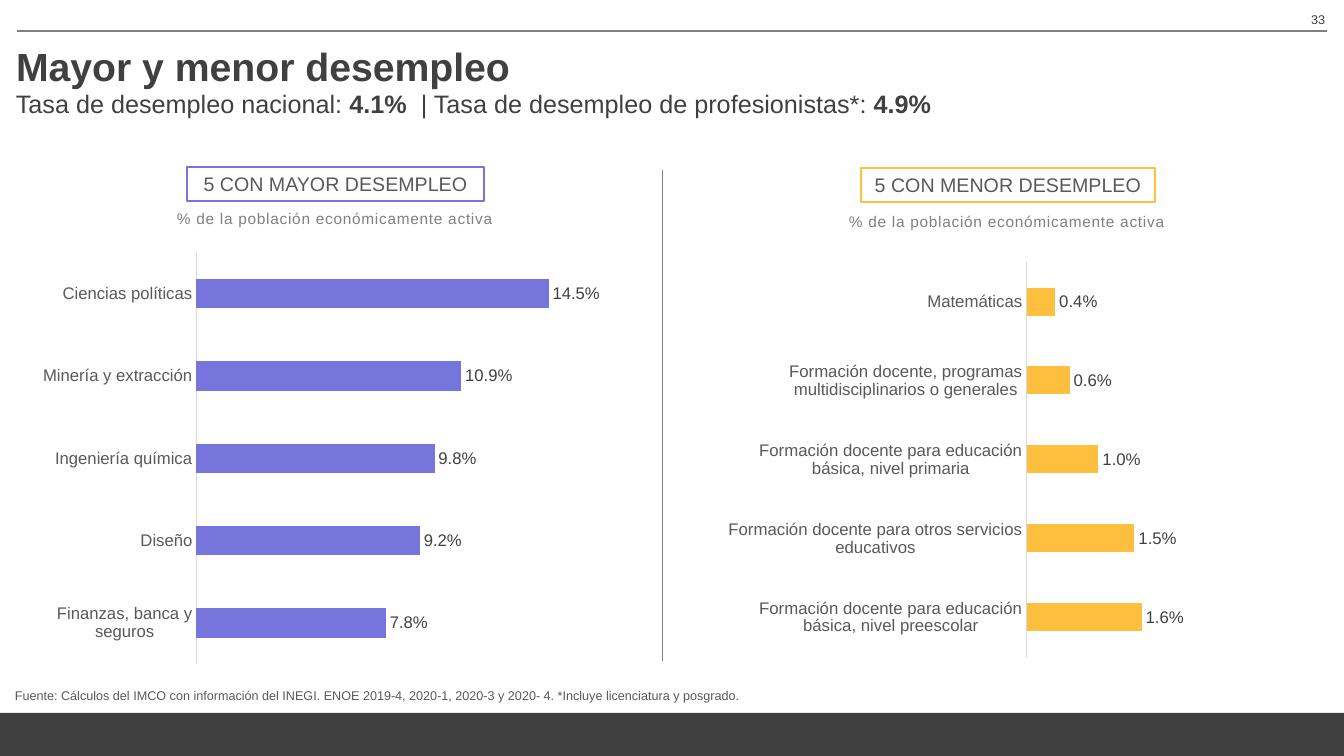
from dataclasses import dataclass

from lxml import etree
from pptx import Presentation
from pptx.chart.data import CategoryChartData
from pptx.dml.color import RGBColor
from pptx.enum.chart import XL_CHART_TYPE as ChartType
from pptx.enum.chart import XL_LABEL_POSITION as LabelPosition
from pptx.enum.chart import XL_TICK_LABEL_POSITION as TickLabelPosition
from pptx.enum.chart import XL_TICK_MARK as TickMark
from pptx.enum.shapes import MSO_CONNECTOR as Connector
from pptx.enum.shapes import MSO_SHAPE as Shape
from pptx.enum.text import MSO_ANCHOR as Anchor
from pptx.enum.text import PP_ALIGN as Align
from pptx.oxml import parse_xml
from pptx.oxml.ns import nsdecls, qn
from pptx.util import Pt

PX = 914400 / 100.8


@dataclass(frozen=True)
class Theme:
    font: str = "Arial"
    dark: RGBColor = RGBColor(0x40, 0x40, 0x40)
    label: RGBColor = RGBColor(0x59, 0x59, 0x59)
    muted: RGBColor = RGBColor(0x80, 0x80, 0x80)
    axis: RGBColor = RGBColor(0xD9, 0xD9, 0xD9)
    purple: RGBColor = RGBColor(0x76, 0x75, 0xDB)
    yellow: RGBColor = RGBColor(0xFF, 0xBF, 0x3E)
    title: int = 28
    subtitle: int = 18
    heading: int = 14
    chart: int = 12
    unit: int = 11
    small: int = 9


theme = Theme()


def px(*lengths):
    return [round(length * PX) for length in lengths]


def style(font, size, color, bold=False):
    font.name = theme.font
    font.size = Pt(size)
    font.bold = bold
    font.color.rgb = color


deck = Presentation()
deck.slide_width, deck.slide_height = px(1344, 756)
page = deck.slides.add_slide(deck.slide_layouts[5])

# Footer band
band = page.shapes.add_shape(Shape.RECTANGLE, *px(0, 713, 1344, 43))
band.shadow.inherit = False
band.fill.solid()
band.fill.fore_color.rgb = theme.dark
band.line.fill.background()

# Header rule and column divider
for ends in [(17, 31, 1327, 31), (663, 170, 663, 661)]:
    rule = page.shapes.add_connector(Connector.STRAIGHT, *px(*ends))
    rule.line.color.rgb = theme.muted
    rule.line.width = Pt(0.75)
    etree.SubElement(rule.element.spPr, qn("a:effectLst"))

# Title
title = page.shapes.title
title.left, title.top, title.width, title.height = px(6, 36, 1329, 60)
title.text_frame.vertical_anchor = Anchor.MIDDLE
para = title.text_frame.paragraphs[0]
para.alignment = Align.LEFT
span = para.add_run()
span.text = "Mayor y menor desempleo"
style(span.font, theme.title, theme.dark, True)

# Page number, subtitle, source and units: place, anchor, alignment, size, color, spacing, runs
unit = [("% de la población económicamente activa", False)]
rates = [
    ("Tasa de desempleo nacional: ", False),
    ("4.1%  ", True),
    ("| Tasa de desempleo de profesionistas*: ", False),
    ("4.9%", True),
]
source = [
    ("Fuente: Cálculos del IMCO con información del INEGI. "
     "ENOE 2019-4, 2020-1, 2020-3 y 2020- 4. *Incluye licenciatura y posgrado.", False),
]
texts = [
    ((1032, 7, 303, 40), Anchor.TOP, Align.RIGHT, theme.small, theme.dark, 0, [("33", False)]),
    ((6, 83, 1122, 40), Anchor.TOP, Align.LEFT, theme.subtitle, theme.dark, 0, rates),
    ((5, 681, 1309, 27), Anchor.BOTTOM, Align.LEFT, theme.small, theme.label, 0, source),
    ((167, 204, 339, 29), Anchor.TOP, Align.LEFT, theme.unit, theme.muted, 50, unit),
    ((839, 207, 339, 29), Anchor.TOP, Align.LEFT, theme.unit, theme.muted, 50, unit),
]
for place, anchor, alignment, size, color, spacing, runs in texts:
    box = page.shapes.add_textbox(*px(*place))
    box.text_frame.word_wrap = not spacing
    box.text_frame.vertical_anchor = anchor
    para = box.text_frame.paragraphs[0]
    para.alignment = alignment
    for words, bold in runs:
        span = para.add_run()
        span.text = words
        style(span.font, size, color, bold)
        if spacing:
            span.font._element.set("spc", str(spacing))

# Column headings
headings = [
    ("5 CON MAYOR DESEMPLEO", (187, 167, 297, 34), theme.purple, 2),
    ("5 CON MENOR DESEMPLEO", (861, 168, 294, 34), theme.yellow, 1.75),
]
for words, place, color, weight in headings:
    box = page.shapes.add_shape(Shape.RECTANGLE, *px(*place))
    box.shadow.inherit = False
    box.fill.background()
    box.line.color.rgb = color
    box.line.width = Pt(weight)
    box.text_frame.word_wrap = True
    box.text_frame.vertical_anchor = Anchor.MIDDLE
    para = box.text_frame.paragraphs[0]
    para.alignment = Align.CENTER
    span = para.add_run()
    span.text = words
    style(span.font, theme.heading, theme.label)

# Bar charts: place, plot area as shares of the chart, axis maximum, color, rates
charts = [
    ((33, 244, 567, 429), (0.29, 0.02, 0.69, 0.96), 0.16, theme.purple, {
        "Ciencias políticas": 0.145,
        "Minería y extracción": 0.109,
        "Ingeniería química": 0.098,
        "Diseño": 0.092,
        "Finanzas, banca y seguros": 0.078,
    }),
    ((709, 245, 648, 429), (0.49, 0.04, 0.2, 0.92), 0.018, theme.yellow, {
        "Matemáticas": 0.004,
        "Formación docente, programas multidisciplinarios o generales": 0.006,
        "Formación docente para educación básica, nivel primaria": 0.01,
        "Formación docente para otros servicios educativos": 0.015,
        "Formación docente para educación básica, nivel preescolar": 0.016,
    }),
]
for place, plot_area, maximum, color, rates_by_field in charts:
    data = CategoryChartData(number_format="0.0%")
    data.categories = list(rates_by_field)
    data.add_series("Tasa de desempleo", list(rates_by_field.values()))
    chart = page.shapes.add_chart(ChartType.BAR_CLUSTERED, *px(*place), data).chart
    chart.has_legend = False
    chart.has_title = False
    style(chart.font, theme.chart, theme.label)

    fields = chart.category_axis
    fields.reverse_order = True
    fields.major_tick_mark = fields.minor_tick_mark = TickMark.NONE
    fields.tick_label_position = TickLabelPosition.NEXT_TO_AXIS
    fields.format.line.color.rgb = theme.axis
    fields.format.line.width = Pt(0.75)
    style(fields.tick_labels.font, theme.chart, theme.label)

    scale = chart.value_axis
    scale.minimum_scale, scale.maximum_scale = 0, maximum
    scale.has_major_gridlines = False
    scale.visible = False

    plot = chart.plots[0]
    plot.gap_width = 182
    plot.vary_by_categories = False
    plot.series[0].format.fill.solid()
    plot.series[0].format.fill.fore_color.rgb = color
    plot.has_data_labels = True
    labels = plot.data_labels
    labels.show_value = True
    labels.position = LabelPosition.OUTSIDE_END
    labels.number_format = "0.0%"
    labels.number_format_is_linked = False
    style(labels.font, theme.chart, theme.dark)

    # Fixed inner plot area
    area = chart.element.find(".//" + qn("c:plotArea"))
    for layout in area.findall(qn("c:layout")):
        area.remove(layout)
    shares = "".join(f'<c:{side} val="{share}"/>' for side, share in zip("xywh", plot_area))
    area.insert(0, parse_xml(
        f'<c:layout {nsdecls("c")}><c:manualLayout><c:layoutTarget val="inner"/>'
        f'<c:xMode val="edge"/><c:yMode val="edge"/>{shares}</c:manualLayout></c:layout>'))

deck.save("out.pptx")
